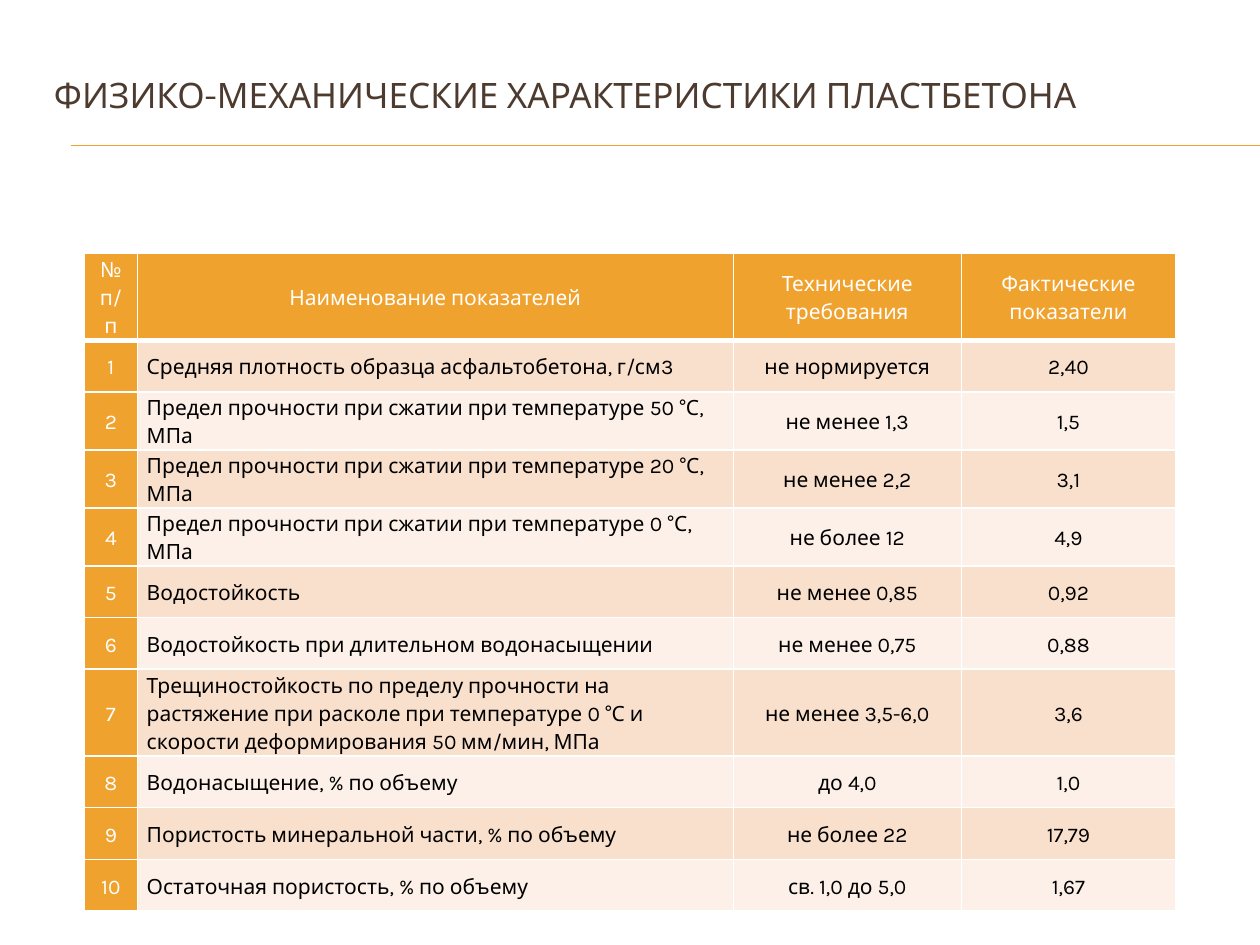
import pptx
import pptx.util
from lxml import etree
from pptx.dml.color import RGBColor
from pptx.enum.lang import MSO_LANGUAGE_ID
from pptx.enum.shapes import MSO_CONNECTOR
from pptx.enum.text import MSO_ANCHOR, PP_ALIGN
from pptx.oxml.ns import qn
from pptx.util import Inches, Pt

FONT = "Karla"
ORANGE = RGBColor(0xF0, 0xA2, 0x2E)
BROWN = RGBColor(0x4E, 0x3B, 0x30)
WHITE = RGBColor(0xFF, 0xFF, 0xFF)
BLACK = RGBColor(0x00, 0x00, 0x00)
BANDS = (RGBColor(0xF9, 0xE0, 0xCD), RGBColor(0xFC, 0xF0, 0xE8))

COLUMN_WIDTHS = (0.42, 4.73, 1.81, 1.7)
HEADER_HEIGHT, ROW_HEIGHT, TALL_ROW_HEIGHT = 0.4, 0.41, 0.52
TALL_ROW = 7

HEADERS = ("№ п/п", "Наименование показателей", "Технические требования", "Фактические показатели")
INDICATORS = (
    ("Средняя плотность образца асфальтобетона, г/см3", "не нормируется", "2,40"),
    ("Предел прочности при сжатии при температуре 50 °С, МПа", "не менее 1,3", "1,5"),
    ("Предел прочности при сжатии при температуре 20 °С, МПа", "не менее 2,2", "3,1"),
    ("Предел прочности при сжатии при температуре 0 °С, МПа", "не более 12", "4,9"),
    ("Водостойкость", "не менее 0,85", "0,92"),
    ("Водостойкость при длительном водонасыщении", "не менее 0,75", "0,88"),
    ("Трещиностойкость по пределу прочности на растяжение при расколе при температуре 0 °С "
     "и скорости деформирования 50 мм/мин, МПа", "не менее 3,5-6,0", "3,6"),
    ("Водонасыщение, % по объему", "до 4,0", "1,0"),
    ("Пористость минеральной части, % по объему", "не более 22", "17,79"),
    ("Остаточная пористость, % по объему", "св. 1,0 до 5,0", "1,67"),
)


def style_paragraph(paragraph, size, color):
    paragraph.font.name = FONT
    paragraph.font.size = Pt(size)
    paragraph.font.color.rgb = color
    for run in paragraph.runs:
        run.font.language_id = MSO_LANGUAGE_ID.RUSSIAN


def add_rule(slide, top):
    """Draw a thin orange line that runs to the right edge of the slide."""
    rule = slide.shapes.add_connector(
        MSO_CONNECTOR.STRAIGHT, Inches(0.56), top, Inches(10), top)
    rule.line.color.rgb = ORANGE
    rule.line.width = Pt(0.75)
    etree.SubElement(rule._element.spPr, qn("a:effectLst"))


def add_title(slide, text):
    box = slide.shapes.add_textbox(Inches(0.33), Inches(0.44), Inches(9.5), Inches(0.94))
    frame = box.text_frame
    frame.word_wrap = True
    frame.vertical_anchor = MSO_ANCHOR.MIDDLE
    frame.margin_bottom = Inches(0.37)
    frame.text = text
    style_paragraph(frame.paragraphs[0], 20, BROWN)


def set_borders(cell, widths):
    """Give the cell white borders; widths maps a:ln* tags to points."""
    properties = cell._tc.get_or_add_tcPr()
    for position, (tag, width) in enumerate(widths.items()):
        line = etree.Element(qn(tag), w=str(Pt(width)))
        fill = etree.SubElement(line, qn("a:solidFill"))
        etree.SubElement(fill, qn("a:srgbClr"), val=str(WHITE))
        properties.insert(position, line)


def fill_cell(cell, text, row, column):
    accented = row == 0 or column == 0
    cell.text = text
    cell.vertical_anchor = MSO_ANCHOR.MIDDLE
    cell.margin_left = cell.margin_right = Pt(5.4)
    cell.margin_top = cell.margin_bottom = 0
    cell.fill.solid()
    cell.fill.fore_color.rgb = ORANGE if accented else BANDS[(row - 1) % 2]
    paragraph = cell.text_frame.paragraphs[0]
    paragraph.line_spacing = 1.15
    paragraph.alignment = PP_ALIGN.LEFT if row > 0 and column == 1 else PP_ALIGN.CENTER
    style_paragraph(paragraph, 12, WHITE if accented else BLACK)
    set_borders(cell, {"a:lnL": 1, "a:lnR": 1,
                       "a:lnT": 3 if row == 1 else 1,
                       "a:lnB": 3 if row == 0 else 1})


def add_indicator_table(slide):
    rows = [HEADERS] + [(str(number), *values) for number, values in enumerate(INDICATORS, 1)]
    heights = [HEADER_HEIGHT] + [ROW_HEIGHT] * len(INDICATORS)
    heights[TALL_ROW] = TALL_ROW_HEIGHT
    table = slide.shapes.add_table(
        len(rows), len(HEADERS), Inches(0.67), Inches(2.01),
        Inches(sum(COLUMN_WIDTHS)), Inches(sum(heights))).table
    for column, width in zip(table.columns, COLUMN_WIDTHS):
        column.width = Inches(width)
    for row_index, (values, height) in enumerate(zip(rows, heights)):
        table.rows[row_index].height = Inches(height)
        for column_index, text in enumerate(values):
            fill_cell(table.cell(row_index, column_index), text, row_index, column_index)


def main():
    presentation = pptx.Presentation()
    presentation.slide_width, presentation.slide_height = Inches(10), Inches(7.5)
    slide = presentation.slides.add_slide(presentation.slide_layouts[6])
    for top in (Pt(83.1), Pt(83.25)):
        add_rule(slide, top)
    add_title(slide, "ФИЗИКО-МЕХАНИЧЕСКИЕ ХАРАКТЕРИСТИКИ ПЛАСТБЕТОНА")
    add_indicator_table(slide)
    presentation.save("out.pptx")


if __name__ == "__main__":
    main()
